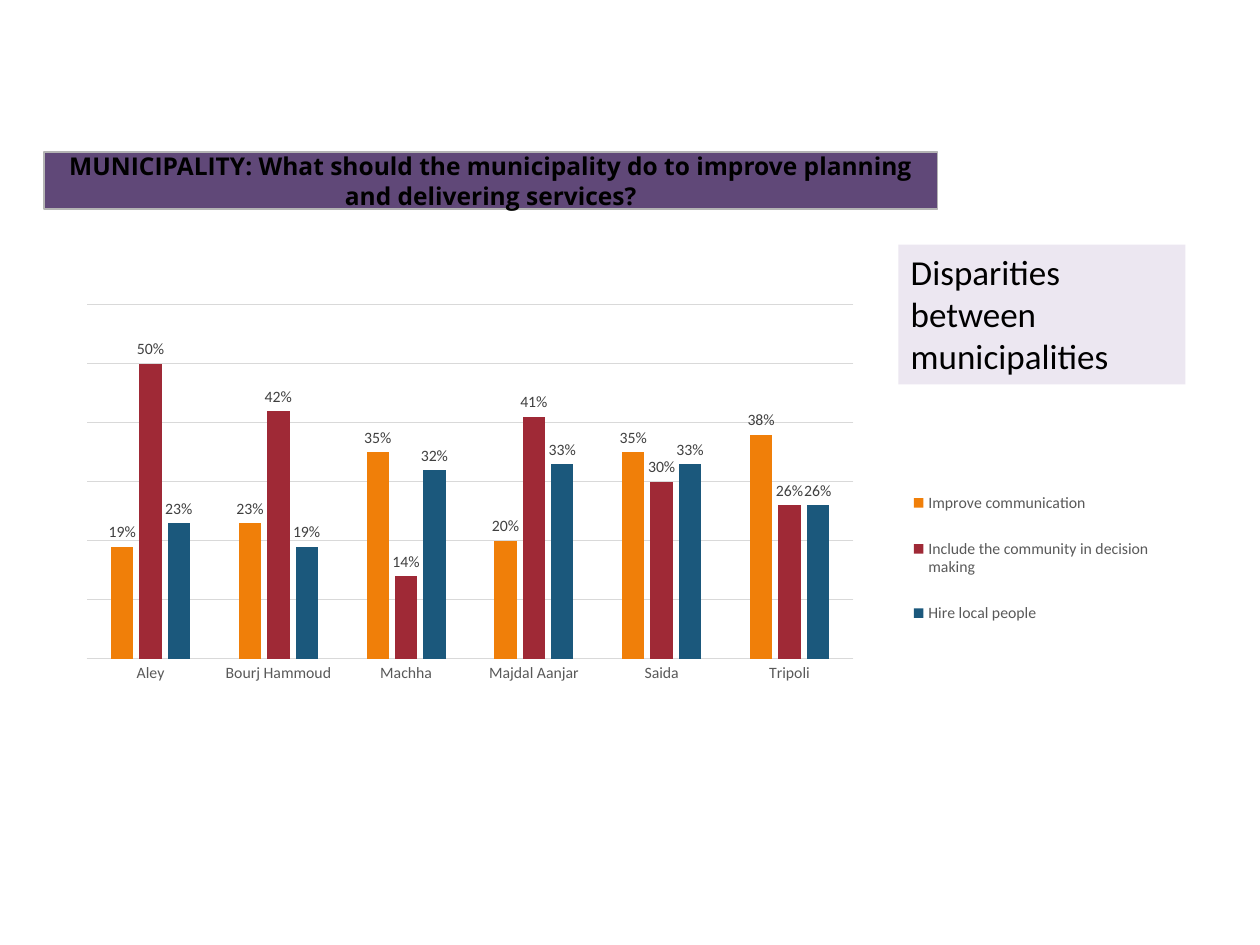
"""Build the slide comparing what residents of six municipalities ask for."""
from dataclasses import dataclass
from typing import Any

import lxml.etree
import pptx
import pptx.chart.data
import pptx.dml.color
import pptx.enum.chart
import pptx.enum.text
import pptx.oxml.ns
import pptx.util
from pptx.util import Cm

COLORS: dict[str, str] = {
    "banner": "604878", "border": "B4B4B4", "note": "ECE7F1", "text": "000000",
    "axis_text": "595959", "label": "404040", "grid": "D9D9D9",
    "orange": "F07F09", "red": "9F2936", "blue": "1B587C",
}
MUNICIPALITIES = ["Aley", "Bourj Hammoud", "Machha", "Majdal Aanjar", "Saida", "Tripoli"]


@dataclass
class Frame:
    left: float
    top: float
    width: float
    height: float

    def lengths(self) -> list[int]:
        return [Cm(self.left), Cm(self.top), Cm(self.width), Cm(self.height)]


@dataclass
class Answer:
    name: str
    color: str
    shares: list[float]


ANSWERS = [
    Answer("Improve communication", "orange", [0.19, 0.23, 0.35, 0.2, 0.35, 0.38]),
    Answer("Include the community in decision making", "red",
           [0.5, 0.42, 0.14, 0.41, 0.3, 0.26]),
    Answer("Hire local people", "blue", [0.23, 0.19, 0.32, 0.33, 0.33, 0.26]),
]


def rgb(name: str) -> pptx.dml.color.RGBColor:
    return pptx.dml.color.RGBColor.from_string(COLORS[name])


def paint(fill: Any, color: str) -> None:
    fill.solid()
    fill.fore_color.rgb = rgb(color)


def style_line(line: Any, color: str, points: float) -> None:
    line.color.rgb = rgb(color)
    line.width = pptx.util.Pt(points)


def style_font(font: Any, size: float, color: str, name: str = "Calibri") -> None:
    font.size = pptx.util.Pt(size)
    font.name = name
    font.color.rgb = rgb(color)


def write(box: Any, text: str, size: float, font_name: str) -> Any:
    para = box.text_frame.paragraphs[0]
    span = para.add_run()
    span.text = text
    style_font(span.font, size, "text", font_name)
    return para


def add_banner(page: Any, frame: Frame, text: str) -> None:
    box = page.shapes.title
    box.left, box.top, box.width, box.height = frame.lengths()
    paint(box.fill, "banner")
    style_line(box.line, "border", 1)
    box.text_frame.word_wrap = True
    box.text_frame.auto_size = pptx.enum.text.MSO_AUTO_SIZE.NONE
    box.text_frame.vertical_anchor = pptx.enum.text.MSO_ANCHOR.MIDDLE
    para = write(box, text, 14, "Open Sans")
    para.alignment = pptx.enum.text.PP_ALIGN.CENTER
    para.runs[0].font.bold = True


def add_note(page: Any, frame: Frame, text: str) -> None:
    box = page.shapes.add_textbox(*frame.lengths())
    paint(box.fill, "note")
    box.text_frame.word_wrap = True
    box.text_frame.auto_size = pptx.enum.text.MSO_AUTO_SIZE.SHAPE_TO_FIT_TEXT
    write(box, text, 20, "Calibri")


def place(parent: Any, index: int, fractions: Frame, inner: bool = False) -> None:
    qn = pptx.oxml.ns.qn
    for old in parent.findall(qn("c:layout")):
        parent.remove(old)
    layout = lxml.etree.Element(qn("c:layout"))
    manual = lxml.etree.SubElement(layout, qn("c:manualLayout"))
    settings = [("layoutTarget", "inner")] if inner else []
    settings += [("xMode", "edge"), ("yMode", "edge"),
                 ("x", fractions.left), ("y", fractions.top),
                 ("w", fractions.width), ("h", fractions.height)]
    for tag, value in settings:
        lxml.etree.SubElement(manual, qn(f"c:{tag}")).set("val", str(value))
    parent.insert(index, layout)


def style_axes(chart: Any) -> None:
    categories, values = chart.category_axis, chart.value_axis
    categories.major_tick_mark = pptx.enum.chart.XL_TICK_MARK.NONE
    style_font(categories.tick_labels.font, 9, "axis_text")
    style_line(categories.format.line, "grid", 0.75)
    values.visible = False
    values.minimum_scale, values.maximum_scale, values.major_unit = 0, 0.6, 0.1
    values.has_major_gridlines = True
    style_line(values.major_gridlines.format.line, "grid", 0.75)
    values.tick_labels.number_format = "0%"
    values.tick_labels.number_format_is_linked = False


def style_series(series: Any, answer: Answer) -> None:
    paint(series.format.fill, answer.color)
    series.invert_if_negative = False
    labels = series.data_labels
    labels.show_value = True
    labels.number_format = "0%"
    labels.number_format_is_linked = False
    labels.position = pptx.enum.chart.XL_LABEL_POSITION.OUTSIDE_END
    style_font(labels.font, 9, "label")


def add_answers_chart(page: Any, frame: Frame) -> None:
    data = pptx.chart.data.CategoryChartData(number_format="0%")
    data.categories = MUNICIPALITIES
    for answer in ANSWERS:
        data.add_series(answer.name, answer.shares)
    kind = pptx.enum.chart.XL_CHART_TYPE.COLUMN_CLUSTERED
    chart = page.shapes.add_chart(kind, *frame.lengths(), data).chart
    style_font(chart.font, 10, "text")
    chart.has_title = False
    style_axes(chart)
    plot = chart.plots[0]
    plot.gap_width, plot.overlap, plot.vary_by_categories = 219, -27, False
    for series, answer in zip(plot.series, ANSWERS):
        style_series(series, answer)
    chart.has_legend = True
    chart.legend.position = pptx.enum.chart.XL_LEGEND_POSITION.RIGHT
    chart.legend.include_in_layout = False
    style_font(chart.legend.font, 9, "axis_text")
    plot_area = chart.category_axis._element.getparent()
    place(plot_area, 0, Frame(0.02, 0.05, 0.69, 0.79), inner=True)
    place(chart.legend._element, 1, Frame(0.75, 0.41, 0.24, 0.41))


def main() -> None:
    deck = pptx.Presentation()
    deck.slide_width, deck.slide_height = Cm(25.4), Cm(19.05)
    page = deck.slides.add_slide(deck.slide_layouts[5])
    add_banner(page, Frame(0.89, 3.07, 18.01, 1.14),
               "MUNICIPALITY: What should the municipality do to improve planning "
               "and delivering services?")
    add_note(page, Frame(18.11, 4.93, 5.79, 2.82), "Disparities between municipalities")
    add_answers_chart(page, Frame(1.3, 5.69, 22.4, 9.04))
    deck.save("out.pptx")


if __name__ == "__main__":
    main()
